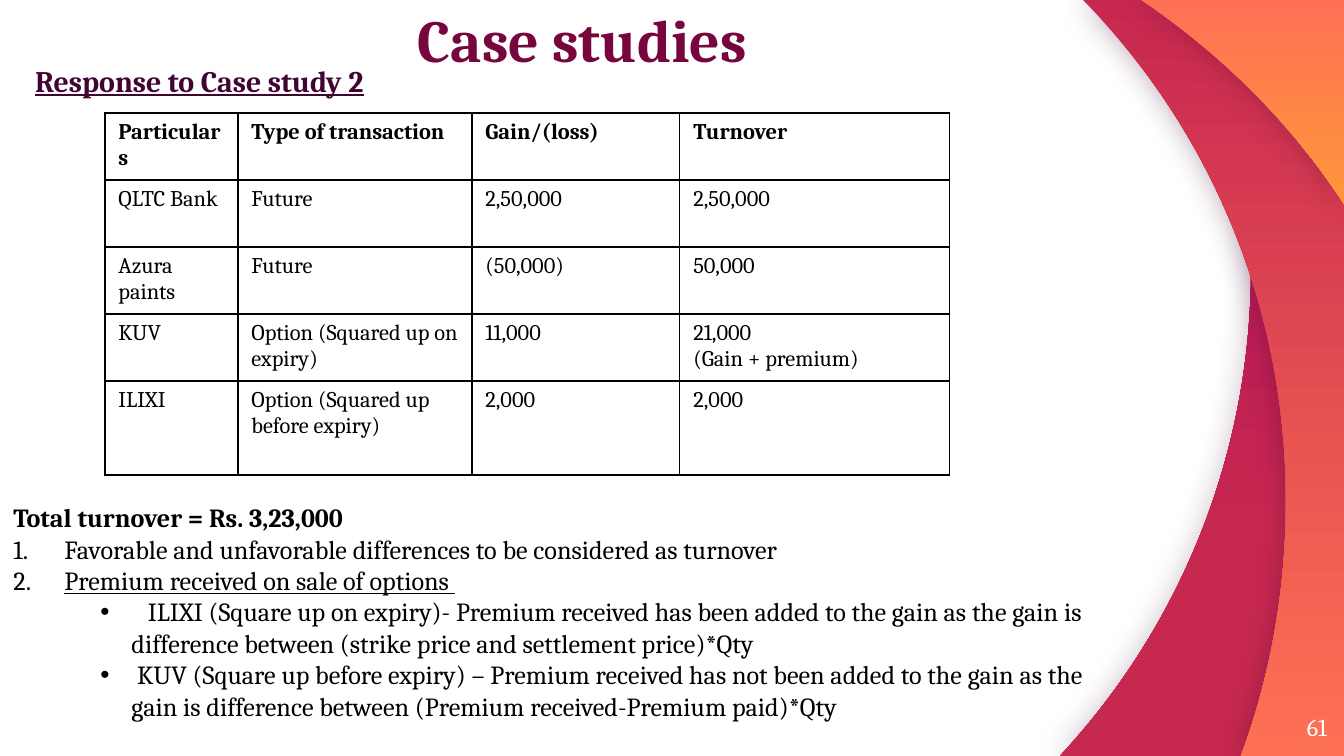
from lxml import etree
from pptx import Presentation
from pptx.dml.color import RGBColor
from pptx.enum.text import MSO_ANCHOR, MSO_AUTO_SIZE, PP_ALIGN
from pptx.oxml.ns import qn
from pptx.util import Pt

PX = 914400 / 134.4
W, H = 1344, 756
FONT = "Cambria"
BLACK = RGBColor(0x00, 0x00, 0x00)
WHITE = RGBColor(0xFF, 0xFF, 0xFF)
PLUM = RGBColor(0x77, 0x06, 0x3F)
DARK = RGBColor(0x41, 0x04, 0x33)
WINE = RGBColor(0xAC, 0x0C, 0x5C)
CRIMSON = RGBColor(0xC7, 0x28, 0x4F)
CORAL = RGBColor(0xFF, 0x71, 0x54)
ORANGE = RGBColor(0xFF, 0x96, 0x3C)
LEFT, CENTER, RIGHT = PP_ALIGN.LEFT, PP_ALIGN.CENTER, PP_ALIGN.RIGHT
TOP, MIDDLE, BOTTOM = MSO_ANCHOR.TOP, MSO_ANCHOR.MIDDLE, MSO_ANCHOR.BOTTOM
NO_FIT = MSO_AUTO_SIZE.NONE

# Start point, Bezier curves, gradient colours, end of gradient, shadow opacity
WAVES = [
    ((1199, 0), [((1234, 86), (1251, 176), (1251, 269)),
                 ((1251, 457), (1179, 628), (1060, 756))], (WINE, CRIMSON), 0.72, 25),
    ((1083, 0), [((1210, 129), (1286, 306), (1286, 501)),
                 ((1286, 589), (1271, 675), (1241, 756))], (CRIMSON, CORAL), 1, 35),
    ((1141, 0), [((1222, 54), (1292, 124), (1344, 204))], (CORAL, ORANGE), 1, 30),
]
COLS = [133, 234, 208, 270]
ROWS = [67, 67, 67, 67, 94]
CELLS = [
    ["Particulars", "Type of transaction", "Gain/(loss)", "Turnover"],
    ["QLTC Bank", "Future", "2,50,000", "2,50,000"],
    ["Azura paints", "Future", "(50,000)", "50,000"],
    ["KUV", "Option (Squared up on expiry)", "11,000", "21,000\n(Gain + premium)"],
    ["ILIXI", "Option (Squared up before expiry)", "2,000", "2,000"],
]
# Text, level, left margin, indent, bullet, bold, underline
NOTES = [
    ("Total turnover = Rs. 3,23,000", 0, 0, 0, None, True, False),
    ("Favorable and unfavorable differences to be considered as turnover",
     0, 51, -51, "number", False, False),
    ("Premium received on sale of options ", 0, 51, -51, "number", False, True),
    ("\tILIXI (Square up on expiry)- Premium received has been added to the gain "
     "as the gain is difference between (strike price and settlement price)*Qty",
     1, 118, -31, "dot", False, False),
    (" KUV (Square up before expiry) – Premium received has not been added to the gain "
     "as the gain is difference between (Premium received-Premium paid)*Qty",
     1, 118, -31, "dot", False, False),
]


def emu(px):
    return round(px * PX)


def place(sp, box):
    sp.left, sp.top, sp.width, sp.height = map(emu, box)


def setup_frame(tf, anchor=TOP, inset=None):
    tf.word_wrap = True
    tf.auto_size = NO_FIT
    tf.vertical_anchor = anchor
    if inset is not None:
        tf.margin_left = tf.margin_top = tf.margin_right = tf.margin_bottom = inset


def write(p, text, size, color=BLACK, bold=False, underline=False, align=LEFT, spacing=1.0):
    p.alignment = align
    p.line_spacing = spacing
    p.space_before = p.space_after = Pt(0)
    r = p.add_run()
    r.text = text
    f = r.font
    f.name, f.size, f.bold, f.underline = FONT, Pt(size), bold, underline
    f.color.rgb = color


def curve_segments(sp, count):
    """Turn the first lines of the outline, three at a time, into Bezier curves."""
    lines = list(sp.element.iter(qn("a:lnTo")))
    for i in range(0, 3 * count, 3):
        curve = etree.Element(qn("a:cubicBezTo"))
        lines[i].addprevious(curve)
        for line in lines[i:i + 3]:
            curve.append(line[0])
            line.getparent().remove(line)


def add_wave(s, start, curves, colors, end, opacity):
    """Curved band that reaches the right edge of the slide."""
    points = [point for curve in curves for point in curve]
    if points[-1][0] < W:
        points.append((W, H))
    points.append((W, 0))
    fb = s.shapes.build_freeform(*start, scale=PX)
    fb.add_line_segments(points, close=True)
    sp = fb.convert_to_shape()
    curve_segments(sp, len(curves))
    sp.line.fill.background()
    sp.fill.gradient()
    sp.fill.gradient_angle = 270
    for stop, color, position in zip(sp.fill.gradient_stops, colors, (0, end)):
        stop.color.rgb = color
        stop.position = position
    sp.shadow.inherit = False
    effects = sp.element.spPr.find(qn("a:effectLst"))
    shadow = etree.SubElement(effects, qn("a:outerShdw"), blurRad=str(Pt(16.9)),
                              dist="0", dir="0", algn="ctr", rotWithShape="0")
    tint = etree.SubElement(shadow, qn("a:srgbClr"), val=str(DARK))
    etree.SubElement(tint, qn("a:alpha"), val=str(opacity * 1000))


def add_text(s, box, text, size, anchor=TOP, inset=None, **fmt):
    sp = s.shapes.add_textbox(*map(emu, box))
    setup_frame(sp.text_frame, anchor, inset)
    write(sp.text_frame.paragraphs[0], text, size, **fmt)


def fill_title(s, box):
    sp = s.shapes.title
    place(sp, box)
    setup_frame(sp.text_frame, BOTTOM, 0)
    write(sp.text_frame.paragraphs[0], "Case studies", 32, PLUM, True,
          align=CENTER, spacing=0.9)


def set_borders(cell):
    tcPr = cell._tc.get_or_add_tcPr()
    for side in ("a:lnL", "a:lnR", "a:lnT", "a:lnB"):
        ln = etree.SubElement(tcPr, qn(side), w=str(Pt(0.75)))
        fill = etree.SubElement(ln, qn("a:solidFill"))
        etree.SubElement(fill, qn("a:srgbClr"), val=str(BLACK))


def add_turnover_table(s, left, top):
    table = s.shapes.add_table(len(ROWS), len(COLS), emu(left), emu(top),
                               emu(sum(COLS)), emu(sum(ROWS))).table
    table.first_row = table.horz_banding = False
    for col, width in zip(table.columns, COLS):
        col.width = emu(width)
    for i, (row, height) in enumerate(zip(table.rows, ROWS)):
        row.height = emu(height)
        for cell, text in zip(row.cells, CELLS[i]):
            set_borders(cell)
            cell.fill.background()
            tf = cell.text_frame
            for j, line in enumerate(text.split("\n")):
                p = tf.add_paragraph() if j else tf.paragraphs[0]
                write(p, line, 12, bold=i == 0)


def set_bullet(p, margin, indent, kind):
    pPr = p._p.get_or_add_pPr()
    pPr.set("marL", str(emu(margin)))
    pPr.set("indent", str(emu(indent)))
    if kind == "number":
        etree.SubElement(pPr, qn("a:buFont"), typeface="+mj-lt")
        etree.SubElement(pPr, qn("a:buAutoNum"), type="arabicPeriod")
    elif kind == "dot":
        etree.SubElement(pPr, qn("a:buFont"), typeface="Arial")
        etree.SubElement(pPr, qn("a:buChar"), char="•")
    else:
        etree.SubElement(pPr, qn("a:buNone"))


def fill_notes(s, box):
    sp = s.placeholders[1]
    place(sp, box)
    tf = sp.text_frame
    setup_frame(tf)
    for i, (text, level, margin, indent, kind, bold, underline) in enumerate(NOTES):
        p = tf.add_paragraph() if i else tf.paragraphs[0]
        p.level = level
        write(p, text, 14, bold=bold, underline=underline)
        set_bullet(p, margin, indent, kind)


def main():
    prs = Presentation()
    prs.slide_width, prs.slide_height = emu(W), emu(H)
    s = prs.slides.add_slide(prs.slide_layouts[1])
    for wave in WAVES:
        add_wave(s, *wave)
    add_text(s, (1246, 698, 81, 58), "61", 13, MIDDLE, 0, color=WHITE, align=RIGHT)
    fill_title(s, (44, 0, 1077, 75))
    add_text(s, (22, 38, 1179, 116), "Response to Case study 2", 16,
             color=DARK, bold=True, underline=True, spacing=1.5)
    add_turnover_table(s, 105, 113)
    fill_notes(s, (0, 495, 1116, 235))
    prs.save("out.pptx")


if __name__ == "__main__":
    main()
